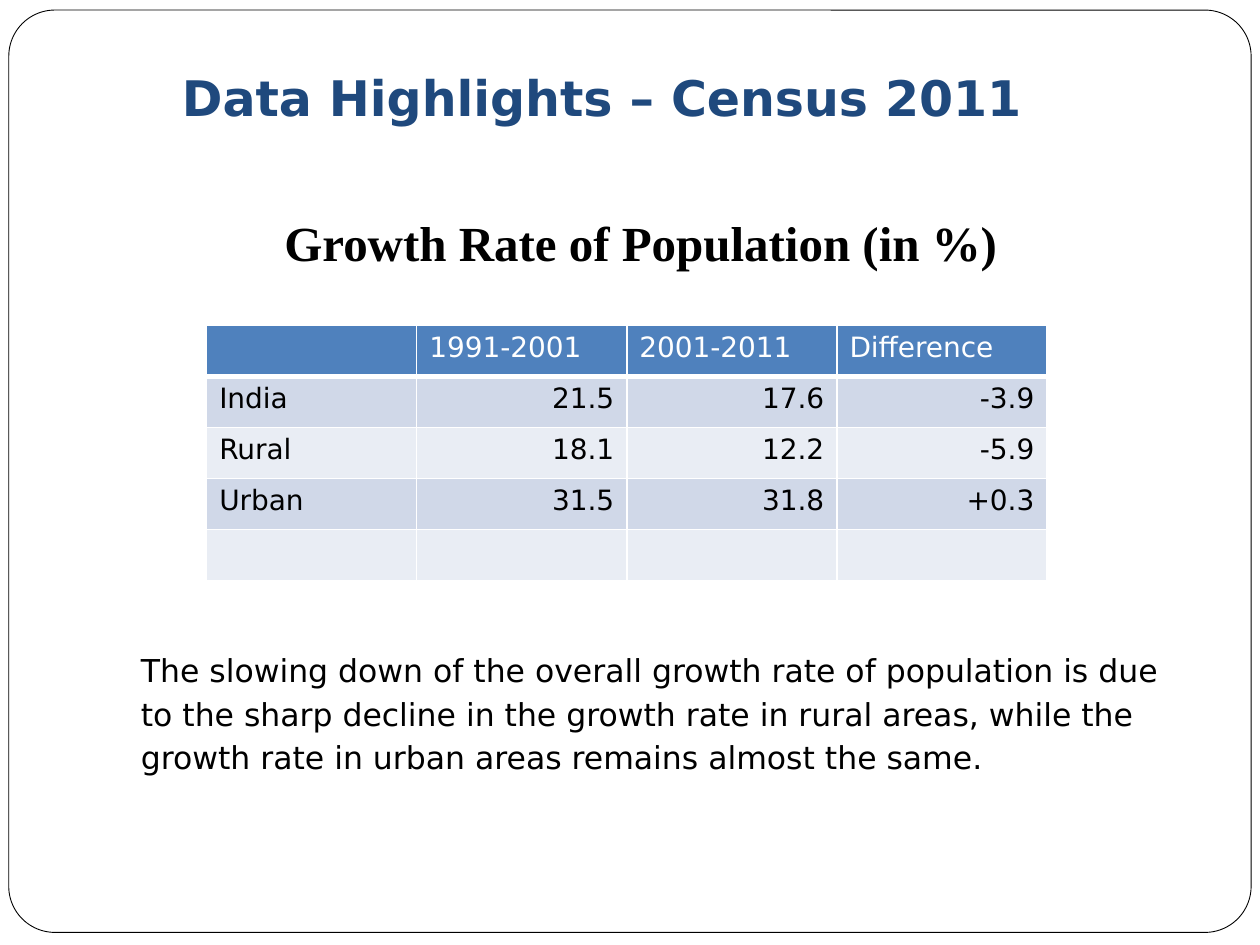
from lxml.etree import SubElement
from pptx import Presentation
from pptx.dml.color import RGBColor
from pptx.enum.shapes import MSO_SHAPE as Preset
from pptx.enum.text import MSO_ANCHOR as Anchor, MSO_AUTO_SIZE as AutoSize, PP_ALIGN as Align
from pptx.oxml.ns import qn
from pptx.util import Inches, Pt

COLORS = {
    "black": "000000",
    "white": "FFFFFF",
    "navy": "1F497D",
    "header": "4F81BD",
    "band_dark": "D0D8E8",
    "band_light": "E9EDF4",
}
SANS, SERIF = "DejaVu Sans", "Times New Roman"


def color(name):
    return RGBColor.from_string(COLORS[name])


class SlideBuilder:
    """Holds the text style and the current slide."""

    def __init__(self, slide, font=SANS):
        self.slide = slide
        self.font = font

    def style(self, paragraph, size, ink="black", bold=False, align=Align.LEFT, font=None):
        paragraph.alignment = align
        paragraph.font.name = font or self.font
        paragraph.font.size = Pt(size)
        paragraph.font.bold = bold
        paragraph.font.color.rgb = color(ink)

    def frame(self, left, top, width, height, radius):
        panel = self.slide.shapes.add_shape(
            Preset.ROUNDED_RECTANGLE, Inches(left), Inches(top), Inches(width), Inches(height))
        panel.adjustments[0] = radius
        panel.shadow.inherit = False
        panel.fill.solid()
        panel.fill.fore_color.rgb = color("white")
        panel.line.color.rgb = color("black")
        panel.line.width = Pt(0.5)

    def text(self, words, left, top, width, height, size, **look):
        box = self.slide.shapes.add_textbox(
            Inches(left), Inches(top), Inches(width), Inches(height)).text_frame
        box.word_wrap = True
        paragraph = box.paragraphs[0]
        paragraph.text = words
        self.style(paragraph, size, **look)
        return box

    def cell_borders(self, cell, bottom=1):
        properties = cell._tc.get_or_add_tcPr()
        for side, width in (("L", 1), ("R", 1), ("T", 1), ("B", bottom)):
            line = SubElement(properties, qn(f"a:ln{side}"), w=str(Pt(width)))
            SubElement(SubElement(line, qn("a:solidFill")), qn("a:srgbClr"), val=COLORS["white"])

    def table(self, rows, left, top, width, height, size):
        grid = self.slide.shapes.add_table(
            len(rows), len(rows[0]), Inches(left), Inches(top), Inches(width), Inches(height)).table
        for r, row in enumerate(rows):
            is_header = r == 0
            band = "header" if is_header else "band_dark" if r % 2 else "band_light"
            for c, value in enumerate(row):
                cell = grid.cell(r, c)
                cell.text = value
                self.cell_borders(cell, bottom=3 if is_header else 1)
                cell.fill.solid()
                cell.fill.fore_color.rgb = color(band)
                self.style(cell.text_frame.paragraphs[0], size,
                           ink="white" if is_header else "black",
                           align=Align.RIGHT if r and c else Align.LEFT)


def main():
    deck = Presentation()
    deck.slide_width, deck.slide_height = Inches(10), Inches(7.5)
    page = SlideBuilder(deck.slides.add_slide(deck.slide_layouts[6]))

    # Rounded page frame
    page.frame(0.07, 0.08, 9.86, 7.32, radius=0.05)

    # Conclusion
    conclusion = page.text(
        "The slowing down of the overall growth rate of population is due to the sharp "
        "decline in the growth rate in rural areas, while the growth rate in urban areas "
        "remains almost the same.", 1.02, 5.08, 8.36, 1.1, 18)
    conclusion.auto_size = AutoSize.SHAPE_TO_FIT_TEXT
    sentence = conclusion.paragraphs[0]
    sentence.line_spacing = 1.14
    sentence.space_before = sentence.space_after = Pt(6)

    # Growth rates, with an empty last row
    growth_rates = [
        ("", "1991-2001", "2001-2011", "Difference"),
        ("India", "21.5", "17.6", "-3.9"),
        ("Rural", "18.1", "12.2", "-5.9"),
        ("Urban", "31.5", "31.8", "+0.3"),
        ("", "", "", ""),
    ]
    page.table(growth_rates, 1.64, 2.58, 6.67, 2.03, 16)

    # Title
    title = page.text("Data Highlights – Census 2011", 0.7, -0.25, 8.17, 1.25, 28,
                      ink="navy", bold=True, align=Align.CENTER)
    title.vertical_anchor = Anchor.BOTTOM
    title.margin_left = title.margin_top = title.margin_bottom = 0
    title.margin_right = Inches(0.02)

    # Table heading
    heading = page.text("Growth Rate of Population (in %)", 2.08, 1.64, 6.01, 0.57, 28,
                        bold=True, align=Align.CENTER, font=SERIF)
    heading.auto_size = AutoSize.SHAPE_TO_FIT_TEXT

    deck.save("out.pptx")


if __name__ == "__main__":
    main()
